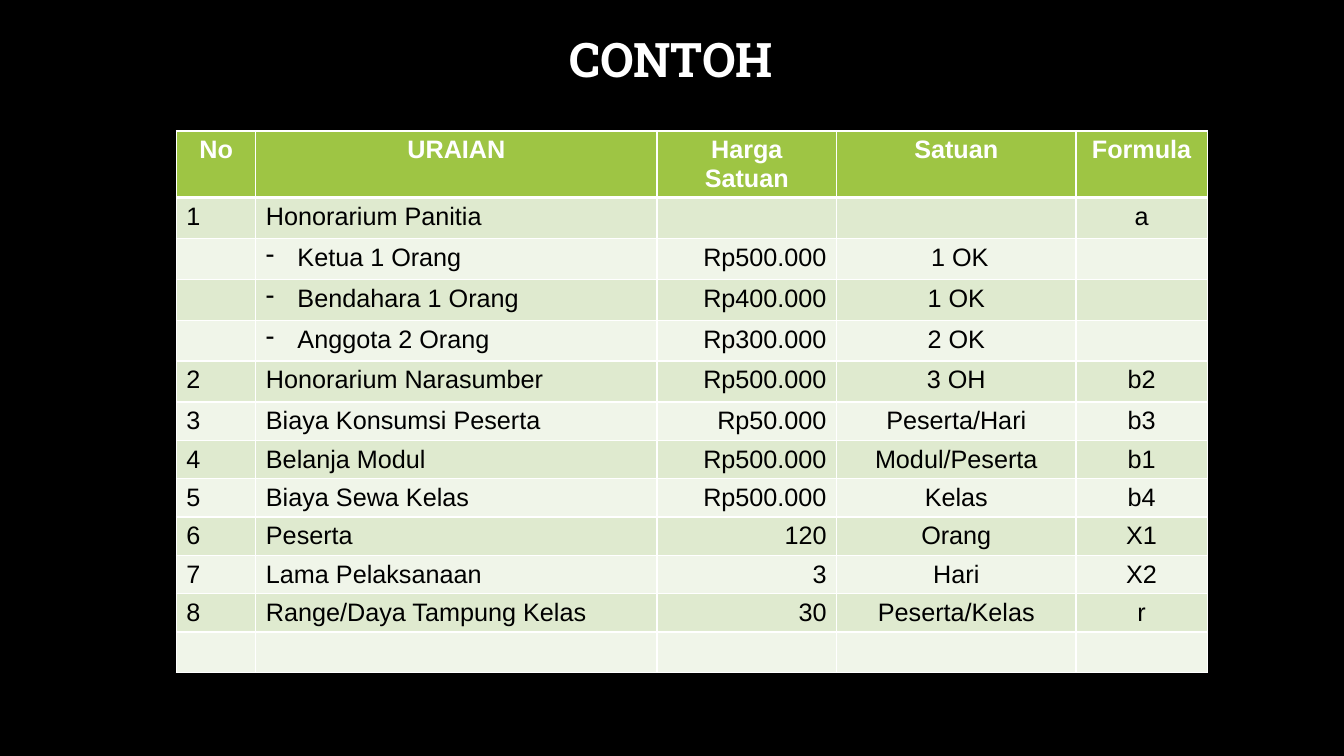
import pptx
import pptx.dml.color
import pptx.enum.text
import pptx.oxml.ns
import pptx.util
import lxml.etree

Pt = pptx.util.Pt
ALIGN = pptx.enum.text.PP_ALIGN
LEFT, CENTER, RIGHT = ALIGN.LEFT, ALIGN.CENTER, ALIGN.RIGHT
qn = pptx.oxml.ns.qn


def rgb(hex_color):
    return pptx.dml.color.RGBColor.from_string(hex_color)


def write(frame, text, size=18, font="Arial", color="000000", bold=False, align=LEFT):
    paragraph = frame.paragraphs[0]
    paragraph.alignment = align
    run = paragraph.add_run()
    run.text = text
    run.font.size = Pt(size)
    run.font.name = font
    run.font.bold = bold
    run.font.color.rgb = rgb(color)
    return paragraph


presentation = pptx.Presentation()
presentation.slide_width = Pt(960)
presentation.slide_height = Pt(540)
slide = presentation.slides.add_slide(presentation.slide_layouts[5])
slide.background.fill.solid()
slide.background.fill.fore_color.rgb = rgb("000000")

title = slide.shapes.title
title.left, title.top, title.width, title.height = Pt(72), Pt(20.9), Pt(815), Pt(46.8)
title.text_frame.vertical_anchor = pptx.enum.text.MSO_ANCHOR.MIDDLE
heading = write(title.text_frame, "CONTOH", size=34, font="Roboto Slab",
                color="FFFFFF", bold=True, align=CENTER)
heading.line_spacing = 0.9

cost_rows = [
    ("No", "URAIAN", "Harga Satuan", "Satuan", "Formula"),
    ("1", "Honorarium Panitia", "", "", "a"),
    ("", "Ketua 1 Orang", "Rp500.000", " 1 OK", ""),
    ("", "Bendahara 1 Orang", "Rp400.000", "1 OK", ""),
    ("", "Anggota 2 Orang", "Rp300.000", "2 OK", ""),
    ("2", "Honorarium Narasumber", "Rp500.000", "3 OH", "b2"),
    ("3", "Biaya Konsumsi Peserta", "Rp50.000", "Peserta/Hari", "b3"),
    ("4", "Belanja Modul", "Rp500.000", "Modul/Peserta", "b1"),
    ("5", "Biaya Sewa Kelas", "Rp500.000", "Kelas", "b4"),
    ("6", "Peserta", "120", "Orang", "X1"),
    ("7", "Lama Pelaksanaan", "3", "Hari", "X2"),
    ("8", "Range/Daya Tampung Kelas", "30", "Peserta/Kelas", "r"),
    ("", "", "", "", ""),
]
column_widths = [56.8, 286.5, 128.3, 171, 93.8]
row_heights = [47.5] + [29.2] * 5 + [27.4] * 6 + [29.2]
column_aligns = [LEFT, LEFT, RIGHT, CENTER, CENTER]

costs = slide.shapes.add_table(len(cost_rows), len(column_widths), Pt(126), Pt(93.6),
                               Pt(sum(column_widths)), Pt(sum(row_heights))).table
for column, width in zip(costs.columns, column_widths):
    column.width = Pt(width)
for row, height in zip(costs.rows, row_heights):
    row.height = Pt(height)

for r, texts in enumerate(cost_rows):
    is_header = r == 0
    band = "9EC544" if is_header else ("F0F5E9", "DFEACF")[r % 2]
    for c, text in enumerate(texts):
        cell = costs.cell(r, c)
        cell_format = cell._tc.get_or_add_tcPr()
        for side in ("lnL", "lnR", "lnT", "lnB"):
            thick = (side == "lnB" and r == 0) or (side == "lnT" and r == 1)
            border = lxml.etree.SubElement(cell_format, qn("a:" + side),
                                           w=str(Pt(3 if thick else 1)))
            paint = lxml.etree.SubElement(border, qn("a:solidFill"))
            lxml.etree.SubElement(paint, qn("a:srgbClr"), val="FFFFFF")
        cell.fill.solid()
        cell.fill.fore_color.rgb = rgb(band)
        if not text:
            continue
        entry = write(cell.text_frame, text, bold=is_header,
                      color="FFFFFF" if is_header else "000000",
                      align=CENTER if is_header else column_aligns[c])
        is_committee_member = c == 1 and not texts[0]
        if is_committee_member:
            indent = entry._p.get_or_add_pPr()
            indent.set("marL", str(Pt(22.5)))
            indent.set("indent", str(Pt(-22.5)))
            lxml.etree.SubElement(indent, qn("a:buChar"), char="-")

presentation.save("out.pptx")
